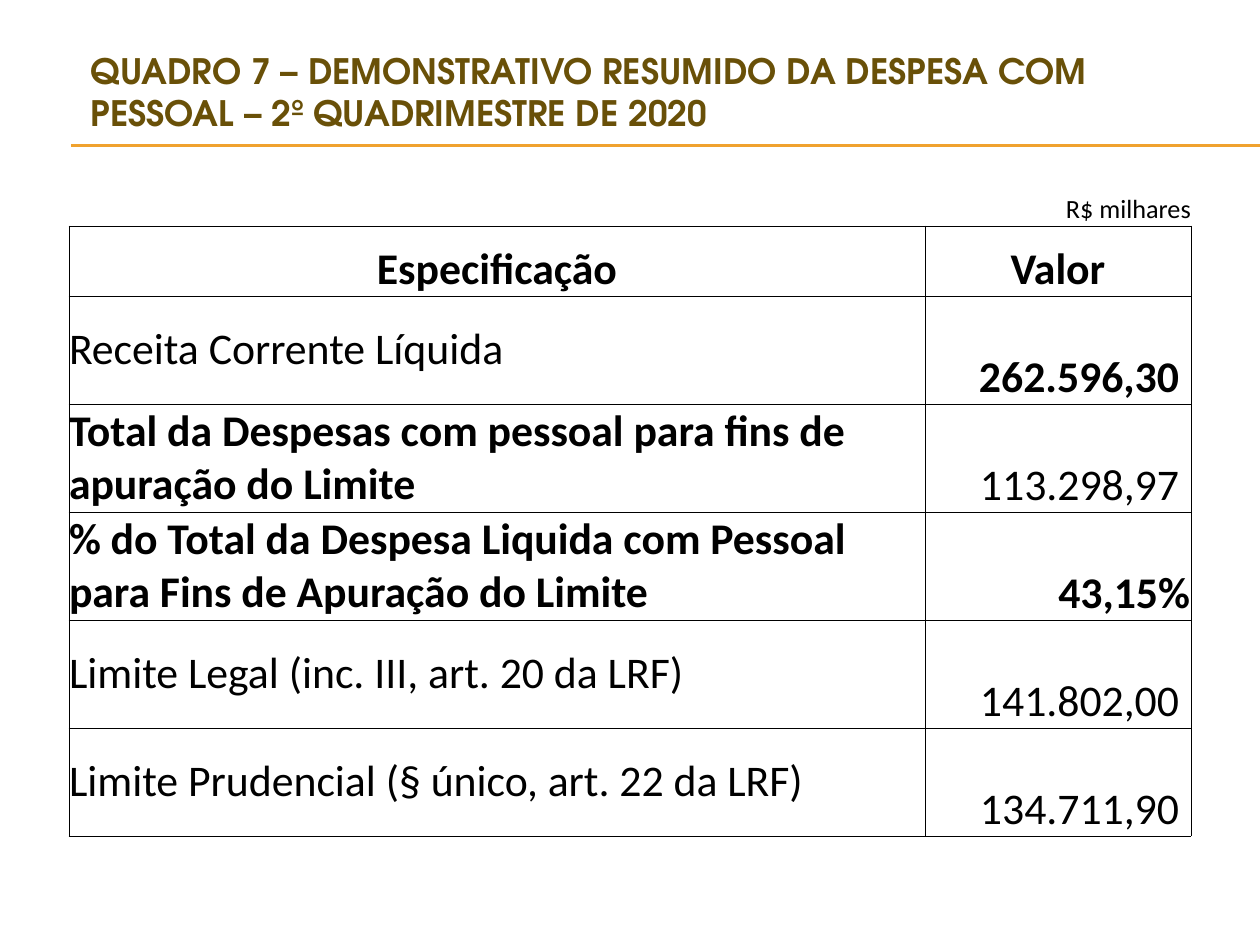
import pptx
import pptx.util
import pptx.dml.color
import pptx.enum.text
import pptx.enum.shapes
import pptx.oxml.ns
import lxml.etree

PX = 914400 // 126
BLACK = pptx.dml.color.RGBColor(0x00, 0x00, 0x00)
BROWN = pptx.dml.color.RGBColor(0x69, 0x50, 0x08)
GOLD = pptx.dml.color.RGBColor(0xF0, 0xA2, 0x2E)

ALIGN = pptx.enum.text.PP_ALIGN
ANCHOR = pptx.enum.text.MSO_ANCHOR

COLS = [336, 187, 187, 146, 266]
ROWS = [68, 70] + [108] * 5

# Label, label bold, value, value bold, right inset of value
ITEMS = [
    ("Receita Corrente Líquida", False, "262.596,30", True, 12),
    ("Total da Despesas com pessoal para fins de apuração do Limite",
     True, "113.298,97", False, 12),
    ("% do Total da Despesa Liquida com Pessoal para Fins de "
     "Apuração do Limite", True, "43,15%", True, 1),
    ("Limite Legal (inc. III, art. 20 da LRF)", False,
     "141.802,00", False, 12),
    ("Limite Prudencial (§ único, art. 22 da LRF)", False,
     "134.711,90", False, 12),
]


def px(num):
    return pptx.util.Emu(num * PX)


def style(par, name, size, color, bold, align):
    par.alignment = align
    par.font.name = name
    par.font.size = pptx.util.Pt(size)
    par.font.color.rgb = color
    par.font.bold = bold


def add_title(slide, text):
    title = slide.shapes.title
    title.left, title.top = px(78), px(49)
    title.width, title.height = px(1071), px(85)
    frame = title.text_frame
    frame.text = text
    frame.word_wrap = True
    frame.auto_size = pptx.enum.text.MSO_AUTO_SIZE.NONE
    frame.vertical_anchor = ANCHOR.MIDDLE
    style(frame.paragraphs[0], "TeX Gyre Adventor", 20, BROWN, True, ALIGN.LEFT)


def add_rule(slide, top):
    kind = pptx.enum.shapes.MSO_CONNECTOR.STRAIGHT
    rule = slide.shapes.add_connector(kind, px(71), px(top), px(1260), px(top))
    rule.line.color.rgb = GOLD
    rule.line.width = pptx.util.Pt(0.75)
    lxml.etree.SubElement(rule._element.spPr, pptx.oxml.ns.qn("a:effectLst"))


def set_edges(cell, drawn):
    props = cell._tc.get_or_add_tcPr()
    for side in "LRTB":
        edge = lxml.etree.SubElement(props, pptx.oxml.ns.qn("a:ln" + side))
        edge.set("w", str(pptx.util.Pt(0.5)))
        if side in drawn:
            fill = lxml.etree.SubElement(edge, pptx.oxml.ns.qn("a:solidFill"))
            tone = lxml.etree.SubElement(fill, pptx.oxml.ns.qn("a:srgbClr"))
            tone.set("val", str(BLACK))
        else:
            lxml.etree.SubElement(edge, pptx.oxml.ns.qn("a:noFill"))
    cell.fill.background()


def fill_cell(cell, text, bold, align, anchor=ANCHOR.BOTTOM, size=25, right=0):
    cell.text = text
    cell.vertical_anchor = anchor
    cell.margin_left = cell.margin_top = cell.margin_bottom = 0
    cell.margin_right = px(right)
    style(cell.text_frame.paragraphs[0], "Calibri", size, BLACK, bold, align)


def add_grid(slide):
    frame = slide.shapes.add_table(len(ROWS), len(COLS), px(69), px(158),
                                   px(sum(COLS)), px(sum(ROWS)))
    grid = frame.table
    grid.first_row = grid.horz_banding = False
    for col, width in zip(grid.columns, COLS):
        col.width = px(width)
    for num, height in enumerate(ROWS):
        grid.rows[num].height = px(height)
        for cell in grid.rows[num].cells:
            set_edges(cell, "LRTB" if num else "B")
        if num:
            grid.cell(num, 0).merge(grid.cell(num, 3))

    # Unit and heads
    fill_cell(grid.cell(0, 4), "R$ milhares", False, ALIGN.RIGHT, size=15)
    fill_cell(grid.cell(1, 0), "Especificação", True, ALIGN.CENTER)
    fill_cell(grid.cell(1, 4), "Valor", True, ALIGN.CENTER)

    # Items
    for num, (label, heavy, value, bold, right) in enumerate(ITEMS, 2):
        fill_cell(grid.cell(num, 0), label, heavy, ALIGN.LEFT, ANCHOR.MIDDLE)
        fill_cell(grid.cell(num, 4), value, bold, ALIGN.RIGHT, right=right)


def main():
    deck = pptx.Presentation()
    deck.slide_width, deck.slide_height = px(1260), px(945)
    slide = deck.slides.add_slide(deck.slide_layouts[5])
    for top in (145, 146):
        add_rule(slide, top)
    add_title(slide, "QUADRO 7 – DEMONSTRATIVO RESUMIDO DA DESPESA COM "
                     "PESSOAL – 2º QUADRIMESTRE DE 2020")
    add_grid(slide)
    deck.save("out.pptx")


if __name__ == "__main__":
    main()
